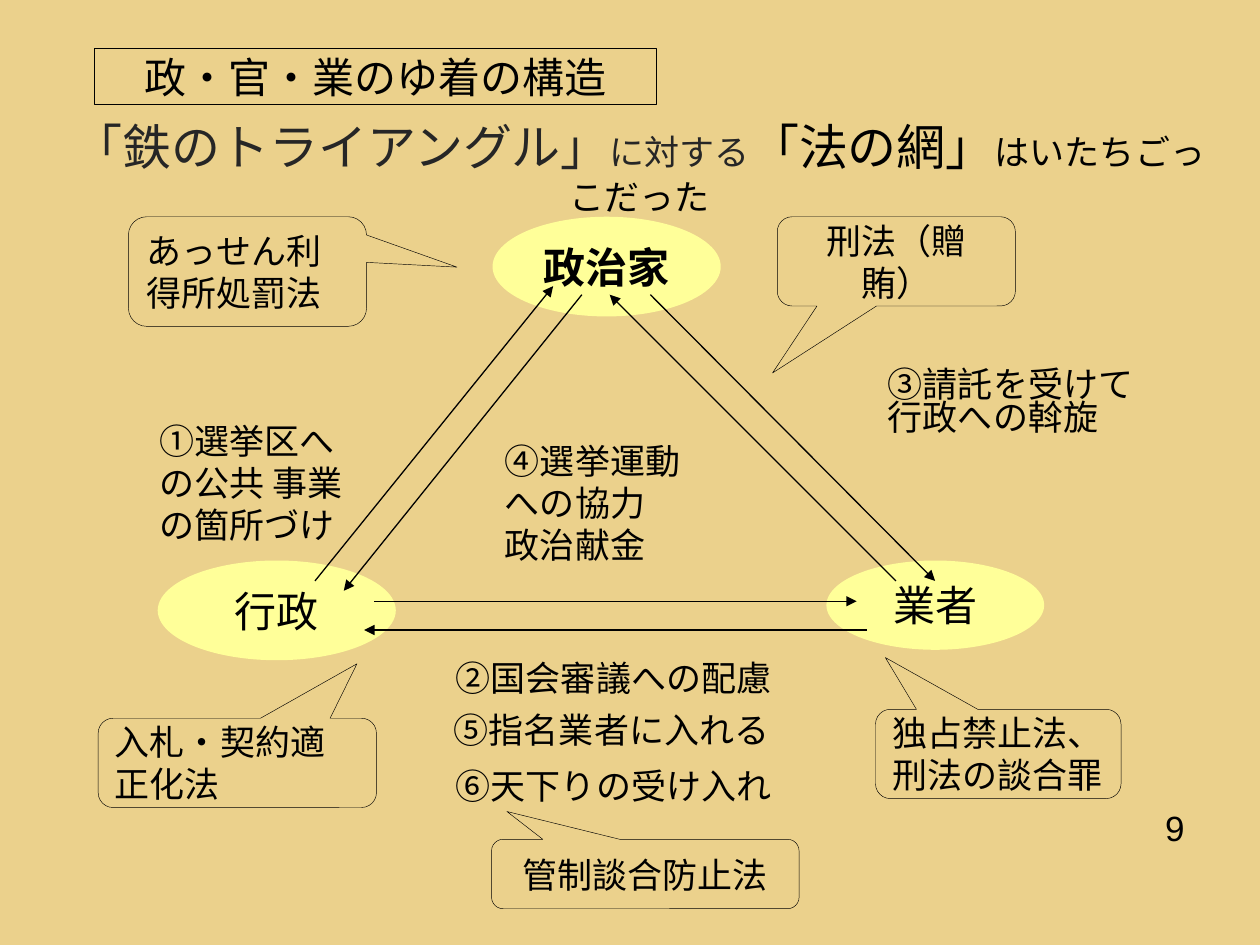
from lxml import etree
from pptx import Presentation
from pptx.dml.color import RGBColor
from pptx.enum.shapes import MSO_CONNECTOR, MSO_SHAPE
from pptx.enum.text import MSO_ANCHOR, PP_ALIGN
from pptx.oxml.ns import qn
from pptx.util import Cm, Pt

LEFT, CENTER, RIGHT = PP_ALIGN.LEFT, PP_ALIGN.CENTER, PP_ALIGN.RIGHT
TOP, MIDDLE = MSO_ANCHOR.TOP, MSO_ANCHOR.MIDDLE
ELLIPSE, RECT = MSO_SHAPE.OVAL, MSO_SHAPE.RECTANGLE
CALLOUT = MSO_SHAPE.ROUNDED_RECTANGULAR_CALLOUT
STRAIGHT = MSO_CONNECTOR.STRAIGHT
CJK = "Noto Sans CJK JP"


def paint(fill, color):
    fill.solid()
    fill.fore_color.rgb = RGBColor.from_string(color)


def write(sp, text, size=20, font="Arial", color="000000", bold=False,
          align=LEFT, anchor=TOP, wrap=True, spacing=None):
    tf = sp.text_frame
    tf.word_wrap = wrap
    tf.vertical_anchor = anchor
    for i, line in enumerate(text.split("\n")):
        p = tf.add_paragraph() if i else tf.paragraphs[-1]
        p.alignment = align
        if spacing:
            p.line_spacing = spacing
        r = p.add_run()
        r.text = line
        r.font.size = Pt(size)
        r.font.bold = bold
        r.font.name = font
        paint(r.font.fill, color)
        etree.SubElement(r.font._element, qn("a:ea"), typeface=CJK)


prs = Presentation()
prs.slide_width, prs.slide_height = Cm(25.4), Cm(19.05)
s = prs.slides.add_slide(prs.slide_layouts[6])
paint(s.background.fill, "EBD18C")

title = s.shapes.add_textbox(Cm(0.99), Cm(1.98), Cm(23.8), Cm(2.77))
for text, size, color in [
    ("「鉄のトライアングル」", 28, "262626"),
    ("に対する", 20, "262626"),
    ("「法の網」", 28, "000000"),
    ("はいたちごっこだった", 20, "000000"),
]:
    write(title, text, size=size, font=CJK, color=color, align=CENTER, anchor=MIDDLE)

number = s.shapes.add_textbox(Cm(22.63), Cm(15.29), Cm(1.5), Cm(2.77))
write(number, "9", align=RIGHT, anchor=MIDDLE)

actors = [
    ("政治家", 9.93, 4.37, 4.6, 2.01, True),
    ("行政", 3.18, 11.3, 4.8, 2.01, False),
    ("業者", 16.66, 11.3, 4.39, 1.8, False),
]
for text, x, y, w, h, bold in actors:
    sp = s.shapes.add_shape(ELLIPSE, Cm(x), Cm(y), Cm(w), Cm(h))
    sp.shadow.inherit = False
    paint(sp.fill, "FFFF99")
    sp.line.fill.background()
    write(sp, text, size=24, bold=bold, align=CENTER, anchor=MIDDLE, wrap=False)

arrows = [
    (13.11, 5.94, 18.85, 11.71),
    (18.06, 11.71, 12.29, 5.94),
    (7.54, 12.12, 17.27, 12.12),
    (17.48, 12.7, 7.34, 12.7),
    (6.35, 11.71, 11.15, 5.77),
    (11.73, 5.94, 6.93, 11.91),
]
for x1, y1, x2, y2 in arrows:
    cxn = s.shapes.add_connector(STRAIGHT, Cm(x1), Cm(y1), Cm(x2), Cm(y2))
    cxn.line.width = Pt(0.75)
    paint(cxn.line.fill, "000000")
    etree.SubElement(cxn.line._get_or_add_ln(), qn("a:tailEnd"), type="triangle")
    etree.SubElement(cxn._element.spPr, qn("a:effectLst"))

labels = [
    ("⑥天下りの受け入れ", 8.94, 15.29, 7.19, 1.09, None),
    ("③請託を受けて行政への斡旋", 17.65, 7.34, 5.99, 1.8, 0.8),
    ("⑤指名業者に入れる", 8.9, 14.33, 7.2, 1.6, 0.8),
    ("④選挙運動への協力\n政治献金", 9.93, 8.74, 4.39, 2.41, None),
    ("②国会審議への配慮", 8.94, 13.11, 6.93, 0.79, None),
    ("①選挙区への公共 事業の箇所づけ", 2.97, 8.33, 4.6, 2.59, None),
]
for text, x, y, w, h, spacing in labels:
    sp = s.shapes.add_textbox(Cm(x), Cm(y), Cm(w), Cm(h))
    write(sp, text, spacing=spacing)

boxes = [
    ("入札・契約適正化法", CALLOUT, 1.98, 14.48, 5.61, 1.8, (0.43, -1.11), LEFT, 20),
    ("独占禁止法、刑法の談合罪", CALLOUT, 17.65, 14.3, 4.95, 1.8, (-0.46, -1.08), LEFT, 20),
    ("管制談合防止法", CALLOUT, 9.91, 16.92, 6.2, 1.4, (-0.45, -0.9), CENTER, 20),
    ("あっせん利得所処罰法", CALLOUT, 2.59, 4.37, 4.8, 2.21, (0.88, -0.04), LEFT, 20),
    ("刑法（贈賄）", CALLOUT, 15.67, 4.37, 4.8, 1.8, (-0.52, 1.25), CENTER, 20),
    ("政・官・業のゆ着の構造", RECT, 1.9, 0.97, 11.33, 1.14, (), CENTER, 24),
]
for text, kind, x, y, w, h, tip, align, size in boxes:
    sp = s.shapes.add_shape(kind, Cm(x), Cm(y), Cm(w), Cm(h))
    for i, value in enumerate(tip):
        sp.adjustments[i] = value
    sp.shadow.inherit = False
    sp.fill.background()
    sp.line.width = Pt(0.25)
    paint(sp.line.fill, "000000")
    write(sp, text, size=size, align=align, anchor=MIDDLE)

prs.save("out.pptx")
